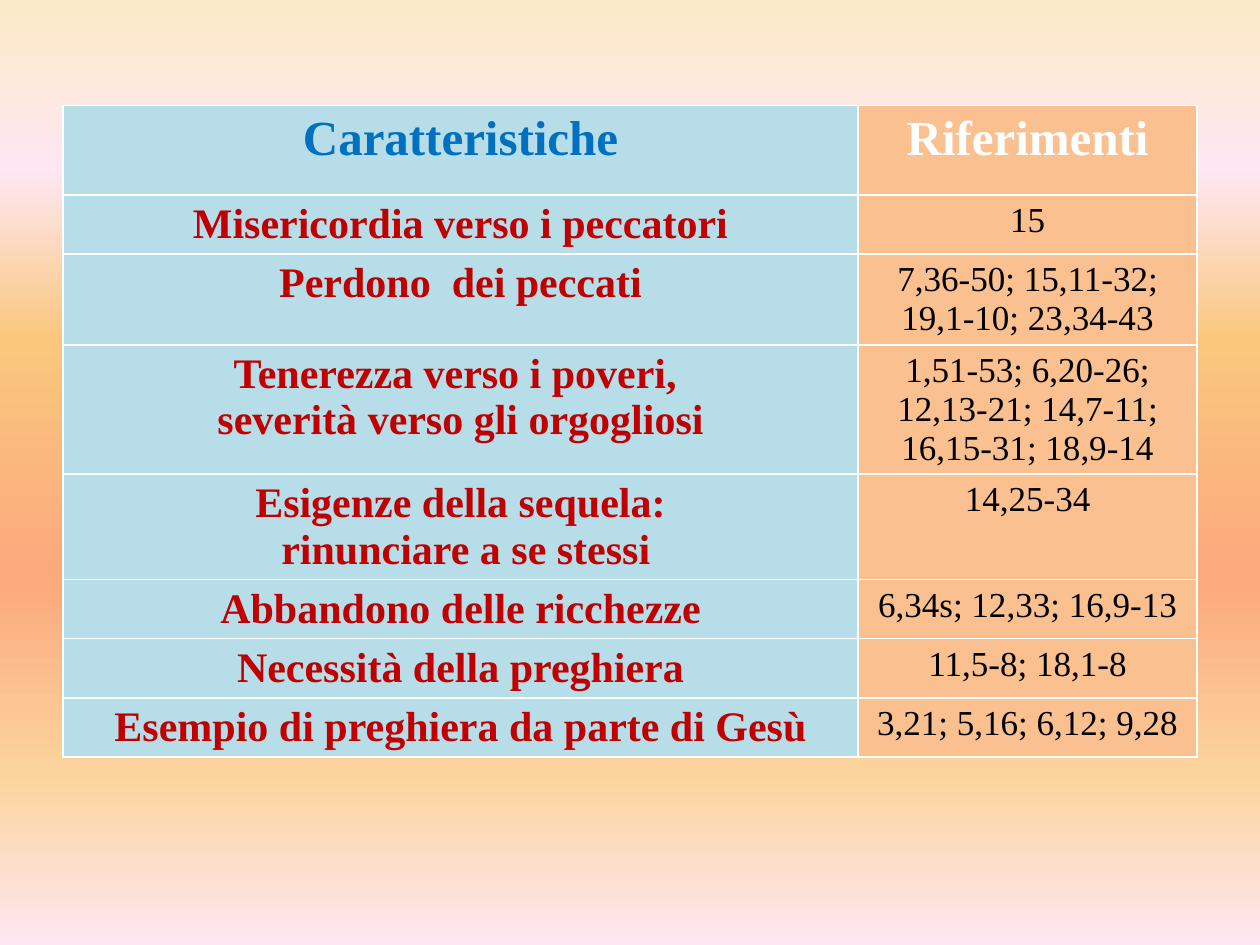
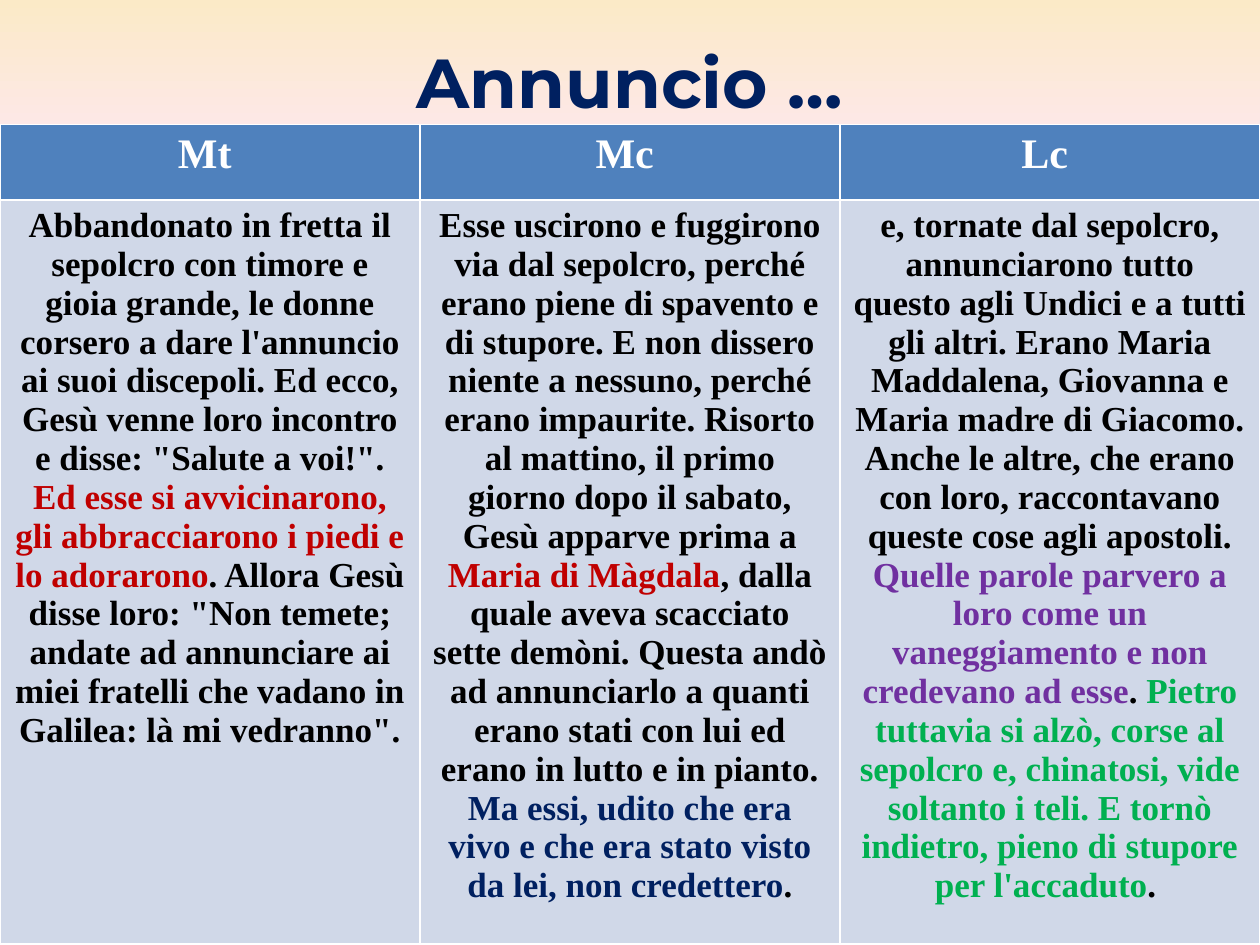
"""Build two slides of Gospel tables on a shared sunrise background."""
from lxml import etree
from pptx import Presentation
from pptx.dml.color import RGBColor
from pptx.enum.text import MSO_ANCHOR, PP_ALIGN
from pptx.oxml.ns import qn
from pptx.util import Cm, Pt

CENTER = PP_ALIGN.CENTER
MIDDLE = MSO_ANCHOR.MIDDLE
SERIF = "Times New Roman"
SANS = "Montserrat"
COLORS = {
    "white": "FFFFFF", "black": "000000", "navy": "002060", "blue": "0070C0",
    "red": "C00000", "purple": "7030A0", "green": "00B050",
    "aqua": "B7DEE8", "peach": "FAC090", "steel": "4F81BD", "pale": "D0D8E8",
}
SKY = [(0, "FBEAC7"), (18, "FEE7F2"), (36, "FAC77D"),
       (61, "FBA97D"), (82, "FBD49C"), (100, "FEE7F2")]

TRAITS = [
    (1.19, "Misericordia verso i peccatori", "15"),
    (1.83, "Perdono  dei peccati", "7,36-50; 15,11-32; 19,1-10; 23,34-43"),
    (2.6, "Tenerezza verso i poveri, \nseverità verso gli orgogliosi",
     "1,51-53; 6,20-26; 12,13-21; 14,7-11; 16,15-31; 18,9-14"),
    (2.13, "Esigenze della sequela:\n rinunciare a se stessi", "14,25-34"),
    (1.19, "Abbandono delle ricchezze", "6,34s; 12,33; 16,9-13"),
    (1.19, "Necessità della preghiera", "11,5-8; 18,1-8"),
    (1.19, "Esempio di preghiera da parte di Gesù", "3,21; 5,16; 6,12; 9,28"),
]

GOSPELS = {
    "Mt ": [
        ("Abbandonato in fretta il sepolcro con timore e gioia grande, le donne "
         "corsero a dare l'annuncio ai suoi discepoli. Ed ecco, Gesù venne loro "
         'incontro e disse: "Salute a voi!". ', "black"),
        ("Ed esse si avvicinarono, gli abbracciarono i piedi e lo adorarono",
         "red"),
        ('. Allora Gesù disse loro: "Non temete; andate ad annunciare ai miei '
         'fratelli che vadano in Galilea: là mi vedranno".', "black"),
    ],
    "Mc ": [
        ("Esse uscirono e fuggirono via dal sepolcro, perché erano piene di "
         "spavento e di stupore. E non dissero niente a nessuno, perché erano "
         "impaurite. Risorto al mattino, il primo giorno dopo il sabato, Gesù "
         "apparve prima a ", "black"),
        ("Maria di Màgdala", "red"),
        (", dalla quale aveva scacciato sette demòni. Questa andò ad "
         "annunciarlo a quanti erano stati con lui ed erano in lutto e in "
         "pianto. ", "black"),
        ("Ma essi, udito che era vivo e che era stato visto da lei, non "
         "credettero", "navy"),
        (".", "black"),
    ],
    "Lc ": [
        ("e, tornate dal sepolcro, annunciarono tutto questo agli Undici e a "
         "tutti gli altri. Erano Maria Maddalena, Giovanna e Maria madre di "
         "Giacomo. Anche le altre, che erano con loro, raccontavano queste cose "
         "agli apostoli. ", "black"),
        ("Quelle parole parvero a loro come un vaneggiamento e non credevano "
         "ad esse", "purple"),
        (". ", "black"),
        ("Pietro tuttavia si alzò, corse al sepolcro e, chinatosi, vide "
         "soltanto i teli. E tornò indietro, pieno di stupore per l'accaduto",
         "green"),
        (". ", "black"),
    ],
}


def rgb(name):
    return RGBColor.from_string(COLORS[name])


def paint_sky(master):
    fill = master.background.fill
    fill.gradient()
    fill.gradient_angle = 270
    stops = master.element.find(".//" + qn("a:gsLst"))
    for stop in list(stops):
        stops.remove(stop)
    for spot, tint in SKY:
        stop = etree.SubElement(stops, qn("a:gs"), pos=str(spot * 1000))
        etree.SubElement(stop, qn("a:srgbClr"), val=tint)


def style(para, size, color=None, bold=True, face=SERIF):
    para.alignment = CENTER
    font = para.font
    font.name, font.size, font.bold = face, Pt(size), bold
    if color:
        font.color.rgb = rgb(color)


def add_grid(slide, left, top, widths, heights):
    frame = slide.shapes.add_table(
        len(heights), len(widths), Cm(left), Cm(top),
        Cm(sum(widths)), Cm(sum(heights)))
    grid = frame.table
    grid.horz_banding = False
    for column, width in zip(grid.columns, widths):
        column.width = Cm(width)
    for row, height in zip(grid.rows, heights):
        row.height = Cm(height)
    return grid


def shade(cell, color):
    cell.fill.solid()
    cell.fill.fore_color.rgb = rgb(color)


def fill_cell(cell, text, back, size, color, bold=True):
    shade(cell, back)
    cell.text = text
    for para in cell.text_frame.paragraphs:
        style(para, size, color, bold)


def fill_verse(cell, parts, back, size):
    shade(cell, back)
    para = cell.text_frame.paragraphs[0]
    style(para, size)
    for text, color in parts:
        run = para.add_run()
        run.text = text
        run.font.color.rgb = rgb(color)


def set_title(slide, text):
    title = slide.shapes.title
    title.left, title.top = Cm(1.27), Cm(0.76)
    title.width, title.height = Cm(22.86), Cm(1.75)
    title.text_frame.text = text
    title.text_frame.vertical_anchor = MIDDLE
    style(title.text_frame.paragraphs[0], 39.6, "navy", face=SANS)


def add_traits(slide):
    heights = [1.8] + [height for height, _, _ in TRAITS]
    grid = add_grid(slide, 1.27, 2.13, [16.03, 6.83], heights)
    fill_cell(grid.cell(0, 0), "Caratteristiche", "aqua", 28, "blue")
    fill_cell(grid.cell(0, 1), "Riferimenti", "peach", 28, "white")
    for row, (_, trait, verses) in enumerate(TRAITS, 1):
        fill_cell(grid.cell(row, 0), trait, "aqua", 24, "red")
        fill_cell(grid.cell(row, 1), verses, "peach", 20, "black", False)


def add_gospels(slide):
    count = len(GOSPELS)
    grid = add_grid(slide, 0, 2.51, [25.4 / count] * count, [1.52, 15])
    for col, (name, parts) in enumerate(GOSPELS.items()):
        fill_cell(grid.cell(0, col), name, "steel", 24, "white")
        fill_verse(grid.cell(1, col), parts, "pale", 20)


def main():
    prs = Presentation()
    prs.slide_width, prs.slide_height = Cm(25.4), Cm(19.05)
    paint_sky(prs.slide_master)
    add_traits(prs.slides.add_slide(prs.slide_layouts[6]))
    slide = prs.slides.add_slide(prs.slide_layouts[5])
    set_title(slide, "Annuncio …")
    add_gospels(slide)
    prs.save("out.pptx")


if __name__ == "__main__":
    main()
